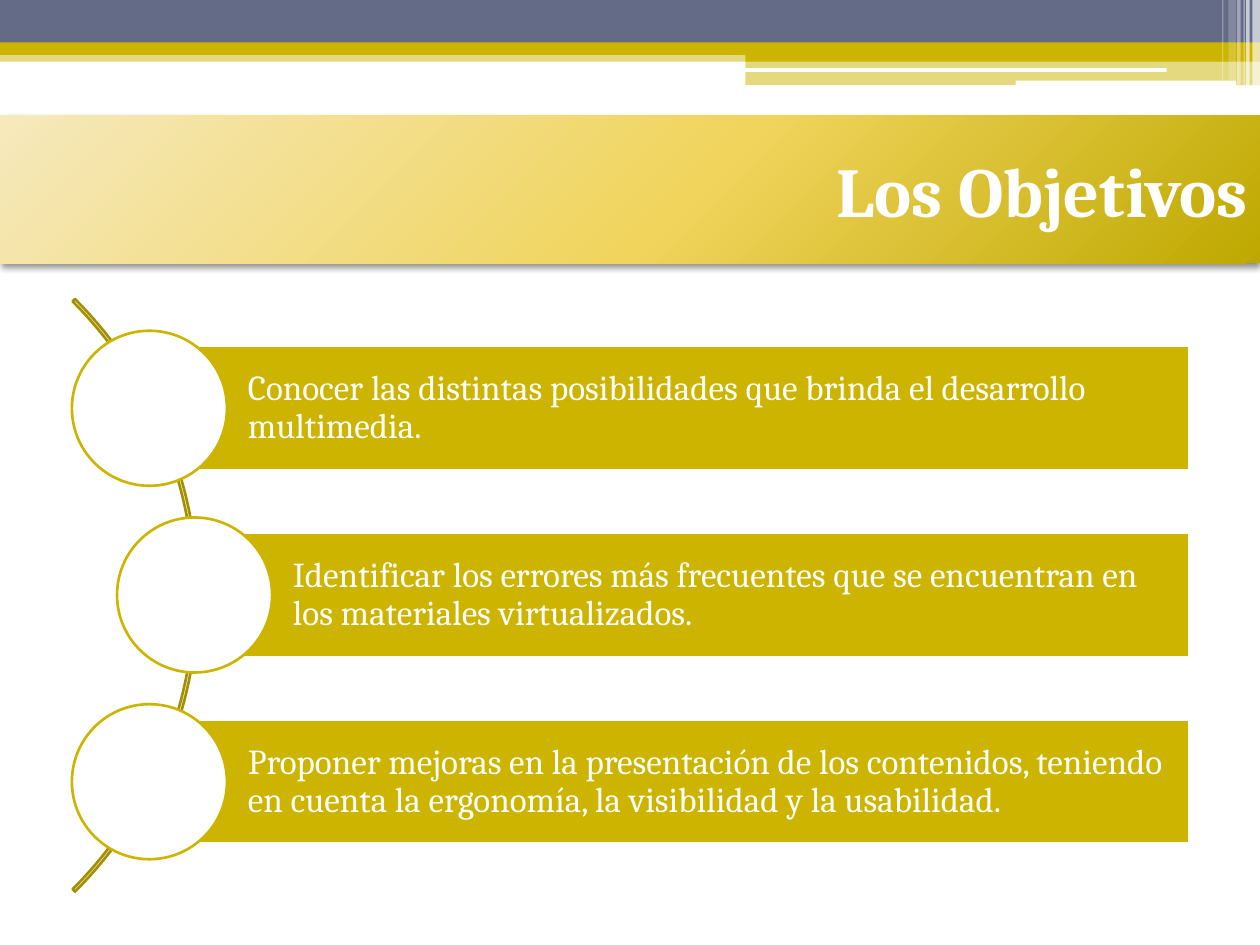
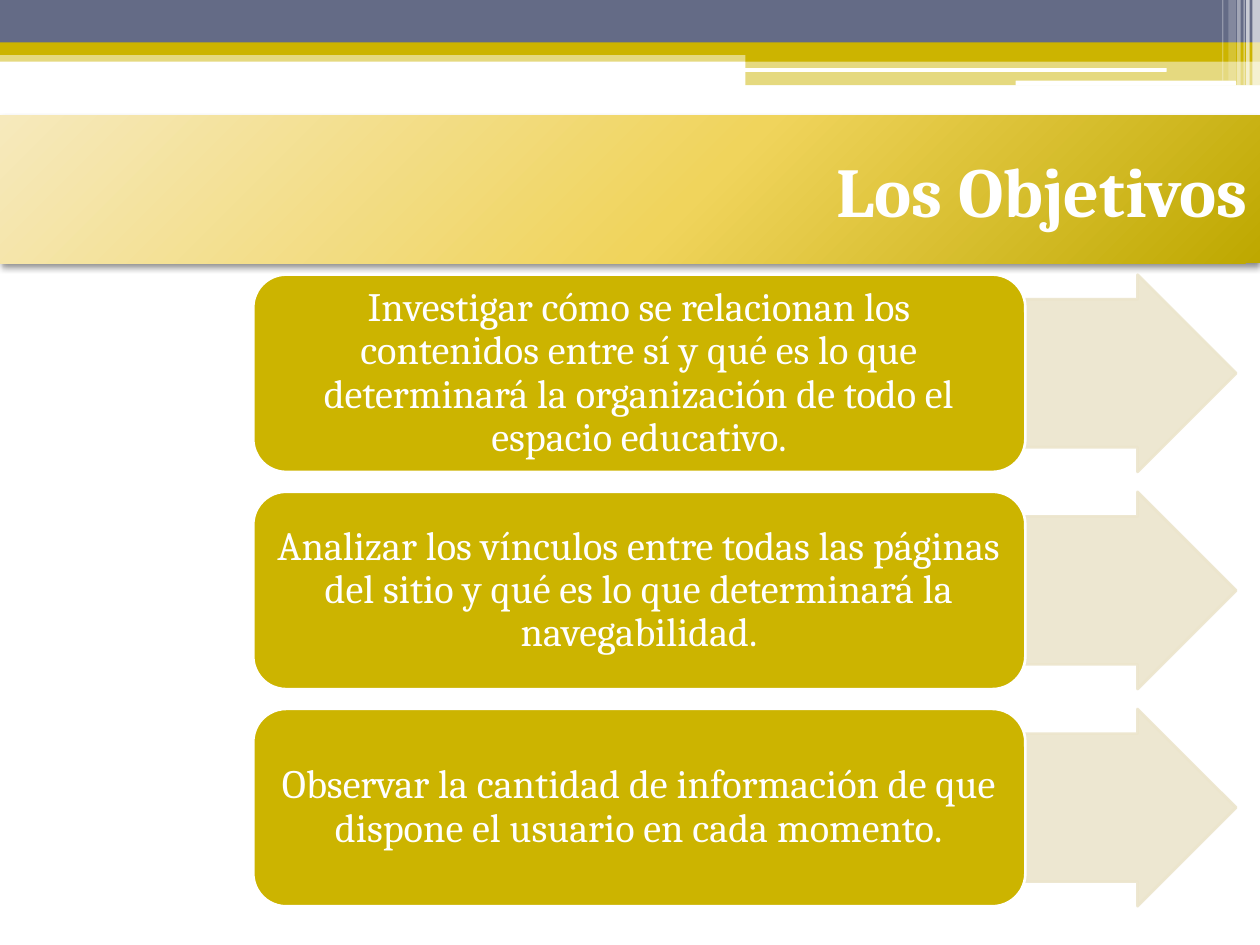
"""Build two slides of goals: a curved list and a stack of arrows."""
from dataclasses import dataclass

import lxml.etree
import pptx
import pptx.dml.color
import pptx.dml.fill
import pptx.enum.shapes
import pptx.enum.text
import pptx.oxml
import pptx.oxml.ns
import pptx.shapes.autoshape
import pptx.slide
import pptx.util

Pt = pptx.util.Pt
qn = pptx.oxml.ns.qn
Kind = pptx.enum.shapes.MSO_SHAPE
Align = pptx.enum.text.PP_ALIGN
Shape = pptx.shapes.autoshape.Shape
Slide = pptx.slide.Slide

WIDE, HIGH = 720, 540
FONT = "Cambria"
GOLD, DARK, SLATE, SAND, WHITE = "CCB400", "A39000", "646B86", "ECE5CC", "FFFFFF"
FADE = ((0, "F6E9BC"), (55, "F0D45C"), (100, "BEA800"))
TITLE = "Los Objetivos"


@dataclass(frozen=True)
class Box:
    """A shape with its place and paint."""
    left: float
    top: float
    width: float
    height: float
    fill: str = ""
    line: str = ""
    alpha: int = 100
    kind: Kind = Kind.RECTANGLE
    tune: tuple[float, ...] = ()


@dataclass(frozen=True)
class Style:
    """The look of a text."""
    size: float
    align: Align
    bold: bool = False
    pitch: float = 1.0
    pad: tuple[float, float, float, float] = (7.2, 3.6, 7.2, 3.6)


HEAD = Style(40, Align.RIGHT, bold=True)
ITEM = Style(20, Align.LEFT, pitch=0.9, pad=(56.2, 4.3, 4.3, 4.3))
CARD = Style(23, Align.CENTER, pitch=0.9)

BANDS = (
    Box(0, 28.8, WIDE, 6.5, GOLD, alpha=50),
    Box(0, 0, WIDE, 24.5, SLATE),
    Box(0, 24.2, WIDE, 7.2, GOLD),
    Box(426, 28.1, 294, 7.2, GOLD),
    Box(426, 35, 294, 13.7, GOLD, alpha=50),
    Box(425.5, 38.9, 241.2, 2.2, WHITE, kind=Kind.ROUNDED_RECTANGLE),
    Box(580.3, 46.1, 126, 2.9, WHITE, kind=Kind.ROUNDED_RECTANGLE),
    Box(715.7, 0, 4.3, 49, WHITE, alpha=65),
    Box(712.1, 0, 2, 49, WHITE, alpha=65),
    Box(710.6, 0, 0.7, 49, WHITE, alpha=60),
    Box(707, 0, 2, 49, WHITE, alpha=40),
    Box(702, 0, 4.3, 46.1, WHITE, alpha=20),
    Box(698.4, 0, 0.7, 46.1, WHITE, alpha=30),
)

GOALS = (
    "Conocer las distintas posibilidades que brinda el desarrollo multimedia.",
    "Identificar los errores más frecuentes que se encuentran en los materiales "
    "virtualizados.",
    "Proponer mejoras en la presentación de los contenidos, teniendo en cuenta "
    "la ergonomía, la visibilidad y la usabilidad.",
)
TASKS = (
    "Investigar cómo se relacionan los contenidos entre sí y qué es lo que "
    "determinará la organización de todo el espacio educativo.",
    "Analizar los vínculos entre todas las páginas del sitio y qué es lo que "
    "determinará la navegabilidad.",
    "Observar la cantidad de información de que dispone el usuario en cada "
    "momento.",
)


def paint(fill: pptx.dml.fill.FillFormat, tone: str) -> None:
    """Fill with a hex colour, or with nothing."""
    if tone:
        fill.solid()
        fill.fore_color.rgb = pptx.dml.color.RGBColor.from_string(tone)
    else:
        fill.background()


def draw(slide: Slide, box: Box) -> Shape:
    """Draw a box on the slide."""
    place = map(Pt, (box.left, box.top, box.width, box.height))
    shape = slide.shapes.add_shape(box.kind, *place)
    for spot, value in enumerate(box.tune):
        shape.adjustments[spot] = value
    shape.shadow.inherit = False
    paint(shape.fill, box.fill)
    paint(shape.line.fill, box.line)
    if box.line:
        shape.line.width = Pt(1.5)
    if box.alpha < 100:
        for tone in shape._element.spPr.iter(qn("a:srgbClr")):
            lxml.etree.SubElement(tone, qn("a:alpha"), val=str(box.alpha * 1000))
    return shape


def write(shape: Shape, text: str, style: Style) -> None:
    """Put white text into a shape."""
    frame = shape.text_frame
    frame.text = text
    frame.word_wrap = True
    frame.vertical_anchor = pptx.enum.text.MSO_ANCHOR.MIDDLE
    (frame.margin_left, frame.margin_top,
     frame.margin_right, frame.margin_bottom) = map(Pt, style.pad)
    line = frame.paragraphs[0]
    line.alignment = style.align
    line.line_spacing = style.pitch
    font = line.runs[0].font
    font.name, font.size, font.bold = FONT, Pt(style.size), style.bold
    paint(font.fill, WHITE)


def glow(shape: Shape) -> None:
    """Give the title band its fade and its shadow."""
    space = pptx.oxml.ns.nsdecls("a")
    stops = "".join(
        f'<a:gs pos="{spot * 1000}"><a:srgbClr val="{tone}"/></a:gs>'
        for spot, tone in FADE)
    fade = pptx.oxml.parse_xml(
        f'<a:gradFill {space} rotWithShape="1"><a:gsLst>{stops}</a:gsLst>'
        '<a:path path="circle"><a:fillToRect l="-40000" t="-90000" '
        'r="140000" b="190000"/></a:path></a:gradFill>')
    shade = pptx.oxml.parse_xml(
        f'<a:outerShdw {space} blurRad="{Pt(4)}" dist="{Pt(2)}" dir="5400000" '
        'rotWithShape="0"><a:srgbClr val="000000"><a:alpha val="45000"/>'
        '</a:srgbClr></a:outerShdw>')
    look = shape._element.spPr
    look.replace(look.find(qn("a:noFill")), fade)
    look.find(qn("a:effectLst")).append(shade)


def start(deck: pptx.presentation.Presentation) -> Slide:
    """Add a slide with the bands and the title."""
    slide = deck.slides.add_slide(deck.slide_layouts[6])
    for band in BANDS:
        draw(slide, band)
    head = draw(slide, Box(0, 66.2, WIDE, 84.2))
    glow(head)
    write(head, TITLE, HEAD)
    return slide


def curve(slide: Slide) -> None:
    """Draw the goals along an arc."""
    disc, high, right = 88.6, 71, 679.4
    draw(slide, Box(-365.8, 100.8, 478.8, 478.8, line=DARK,
                    kind=Kind.BLOCK_ARC, tune=(189, 27, 0.004)))
    for row, goal in enumerate(GOALS):
        left = 111.2 if row == 1 else 85.4
        mid = 233.3 + 106.7 * row
        bar = Box(left, mid - high / 2, right - left, high, GOLD, WHITE)
        write(draw(slide, bar), goal, ITEM)
        draw(slide, Box(left - disc / 2, mid - disc / 2, disc, disc,
                        WHITE, GOLD, kind=Kind.OVAL))


def stack(slide: Slide) -> None:
    """Draw the tasks as cards with arrows."""
    high = 112.8
    for row, task in enumerate(TASKS):
        top = 156.9 + 124.1 * row
        draw(slide, Box(441.4, top, 265, high, SAND, SAND, 90,
                        Kind.RIGHT_ARROW, (0.75, 0.5)))
        card = Box(144.7, top, 441.2, high, GOLD, WHITE,
                   kind=Kind.ROUNDED_RECTANGLE)
        write(draw(slide, card), task, CARD)


def main() -> None:
    """Build and save the deck."""
    deck = pptx.Presentation()
    deck.slide_width, deck.slide_height = Pt(WIDE), Pt(HIGH)
    curve(start(deck))
    stack(start(deck))
    deck.save("out.pptx")


if __name__ == "__main__":
    main()
